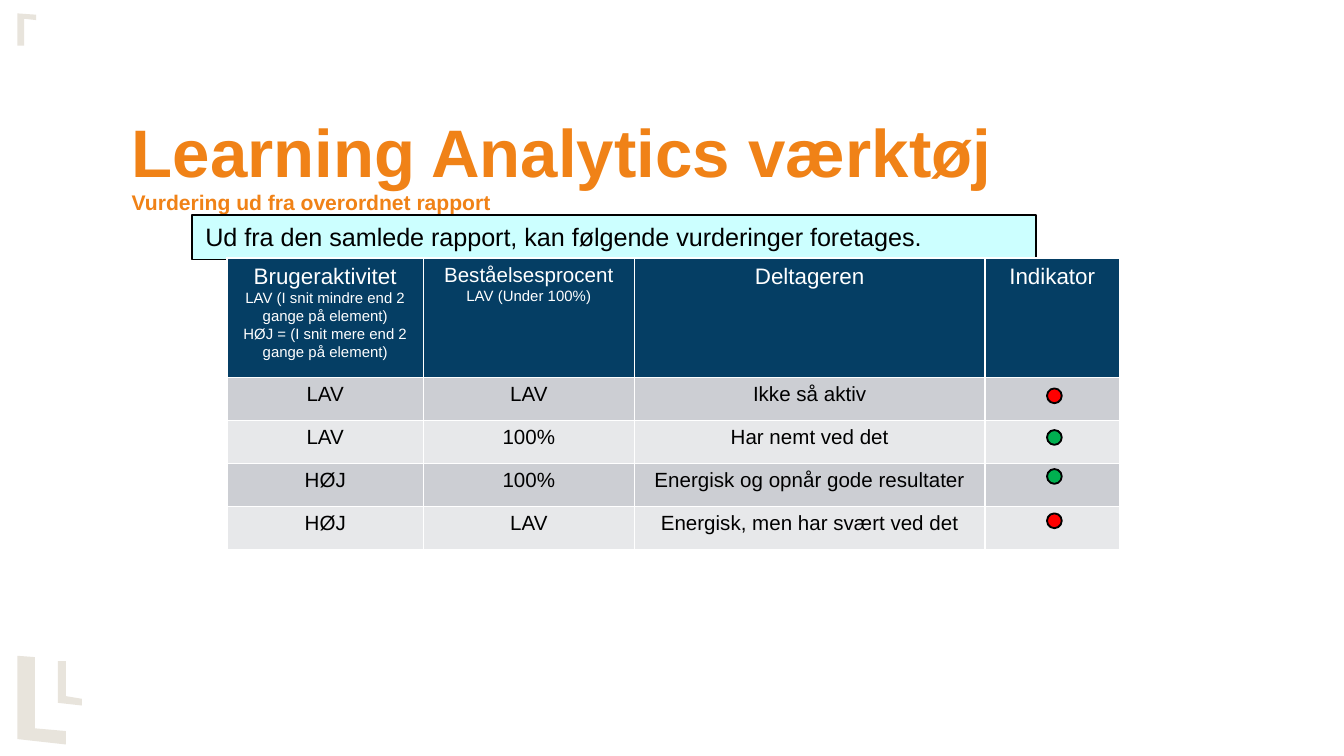
from typing import NamedTuple

from lxml import etree
from pptx import Presentation
from pptx.dml.color import RGBColor
from pptx.enum.shapes import MSO_SHAPE
from pptx.enum.text import MSO_ANCHOR, MSO_AUTO_SIZE, PP_ALIGN
from pptx.oxml.ns import qn
from pptx.util import Inches, Pt

RECTANGLE, OVAL = MSO_SHAPE.RECTANGLE, MSO_SHAPE.OVAL
LEFT, CENTER = PP_ALIGN.LEFT, PP_ALIGN.CENTER
TOP, BOTTOM = MSO_ANCHOR.TOP, MSO_ANCHOR.BOTTOM
GROW_TO_FIT = MSO_AUTO_SIZE.SHAPE_TO_FIT_TEXT
FONT = "Arial"
COLORS = {
    "orange": "F08217", "navy": "053E64", "white": "FFFFFF", "black": "000000",
    "cyan": "CCFFFF", "dark band": "CCCED3", "light band": "E7E8EA",
    "beige": "E8E4DC", "red": "FF0000", "green": "00B050",
}


class Line(NamedTuple):
    text: str
    size: float


class Indicator(NamedTuple):
    top: float
    color: str


# Corner points in hundredths of an inch, as freeforms take whole units.
CORNER_MARKS = [
    [(26, 489), (13, 488), (13, 550), (49, 554), (49, 544), (26, 542)],
    [(49, 492), (43, 492), (43, 523), (61, 525), (61, 520), (49, 518)],
    [(18, 34), (18, 14), (27, 15), (27, 11), (13, 10), (13, 34)],
]
COLUMN_WIDTHS = [1.46, 1.57, 2.61, 1]
ROW_HEIGHTS = [0.89] + [0.32] * 4
HEADERS = [
    [Line("Brugeraktivitet", 12),
     Line("LAV (I snit mindre end 2 gange på element)", 8),
     Line("HØJ = (I snit mere end 2 gange på element)", 8)],
    [Line("Beståelsesprocent", 11), Line("LAV (Under 100%)", 8)],
    [Line("Deltageren", 12)],
    [Line("Indikator", 12)],
]
ASSESSMENTS = [
    ("LAV", "LAV", "Ikke så aktiv", ""),
    ("LAV", "100%", "Har nemt ved det", ""),
    ("HØJ", "100%", "Energisk og opnår gode resultater", ""),
    ("HØJ", "LAV", "Energisk, men har svært ved det", ""),
]
INDICATORS = [Indicator(2.89, "red"), Indicator(3.2, "green"),
              Indicator(3.49, "green"), Indicator(3.82, "red")]


def rgb(name: str) -> RGBColor:
    return RGBColor.from_string(COLORS[name])


def add_text(paragraph, text: str, *, size: float, color: str = "black",
             bold: bool = False, align=LEFT, spacing: float = 1.0) -> None:
    paragraph.alignment = align
    paragraph.line_spacing = spacing
    if not text:
        # An empty cell needs a small end mark, or its row grows.
        etree.SubElement(paragraph._p, qn("a:endParaRPr"), sz=str(size * 100))
        return
    run = paragraph.add_run()
    run.text = text
    run.font.name = FONT
    run.font.size = Pt(size)
    run.font.bold = bold
    run.font.color.rgb = rgb(color)


def add_mark(slide, points: list) -> None:
    builder = slide.shapes.build_freeform(*points[0], scale=Inches(0.01))
    builder.add_line_segments(points[1:], close=True)
    shape = builder.convert_to_shape()
    shape.shadow.inherit = False
    shape.fill.solid()
    shape.fill.fore_color.rgb = rgb("beige")
    shape.line.fill.background()


def add_outlined_shape(slide, kind, left: float, top: float, width: float,
                       height: float, fill: str, line_width: float):
    shape = slide.shapes.add_shape(kind, Inches(left), Inches(top),
                                   Inches(width), Inches(height))
    shape.shadow.inherit = False
    shape.fill.solid()
    shape.fill.fore_color.rgb = rgb(fill)
    shape.line.color.rgb = rgb("black")
    shape.line.width = Pt(line_width)
    return shape


def add_title(slide) -> None:
    box = slide.shapes.add_textbox(Inches(0.98), Inches(0.72), Inches(8.19), Inches(0.88))
    frame = box.text_frame
    frame.word_wrap = True
    frame.vertical_anchor = BOTTOM
    frame.margin_left = frame.margin_right = frame.margin_top = frame.margin_bottom = 0
    paragraph = frame.paragraphs[0]
    style = {"color": "orange", "bold": True, "spacing": 0.9}
    add_text(paragraph, "Learning Analytics værktøj", size=36, **style)
    paragraph.add_line_break()
    add_text(paragraph, "Vurdering ud fra overordnet rapport", size=11.25, **style)


def add_intro(slide) -> None:
    shape = add_outlined_shape(slide, RECTANGLE, 1.43, 1.6, 6.28, 0.33, "cyan", 0.75)
    frame = shape.text_frame
    frame.word_wrap = True
    frame.auto_size = GROW_TO_FIT
    frame.vertical_anchor = TOP
    add_text(frame.paragraphs[0],
             "Ud fra den samlede rapport, kan følgende vurderinger foretages.", size=13.5)


def set_borders(cell) -> None:
    properties = cell._tc.get_or_add_tcPr()
    for index, tag in enumerate(("a:lnL", "a:lnR", "a:lnT", "a:lnB")):
        border = etree.Element(qn(tag), w=str(Pt(1)))
        fill = etree.SubElement(border, qn("a:solidFill"))
        etree.SubElement(fill, qn("a:srgbClr"), val=COLORS["white"])
        properties.insert(index, border)


def fill_cell(cell, lines: list, fill: str, color: str) -> None:
    cell.margin_left = cell.margin_right = Inches(0.06)
    cell.margin_top = cell.margin_bottom = Inches(0.03)
    cell.fill.solid()
    cell.fill.fore_color.rgb = rgb(fill)
    set_borders(cell)
    frame = cell.text_frame
    for index, line in enumerate(lines):
        paragraph = frame.add_paragraph() if index else frame.paragraphs[0]
        add_text(paragraph, line.text, size=line.size, color=color,
                 align=CENTER, spacing=1.07)


def add_assessment_table(slide) -> None:
    table = slide.shapes.add_table(
        len(ROW_HEIGHTS), len(COLUMN_WIDTHS), Inches(1.69), Inches(1.92),
        Inches(sum(COLUMN_WIDTHS)), Inches(sum(ROW_HEIGHTS))).table
    for column, width in zip(table.columns, COLUMN_WIDTHS):
        column.width = Inches(width)
    for row, height in zip(table.rows, ROW_HEIGHTS):
        row.height = Inches(height)
    for column, lines in enumerate(HEADERS):
        fill_cell(table.cell(0, column), lines, "navy", "white")
    for row, texts in enumerate(ASSESSMENTS, start=1):
        band = "dark band" if row % 2 else "light band"
        for column, text in enumerate(texts):
            fill_cell(table.cell(row, column), [Line(text, 11)], band, "black")


def main() -> None:
    presentation = Presentation()
    presentation.slide_width = Inches(10)
    presentation.slide_height = Inches(10 * 9 / 16)
    slide = presentation.slides.add_slide(presentation.slide_layouts[6])
    for points in CORNER_MARKS:
        add_mark(slide, points)
    add_title(slide)
    add_intro(slide)
    add_assessment_table(slide)
    for indicator in INDICATORS:
        add_outlined_shape(slide, OVAL, 7.79, indicator.top, 0.11, 0.11, indicator.color, 1)
    presentation.save("out.pptx")


if __name__ == "__main__":
    main()
